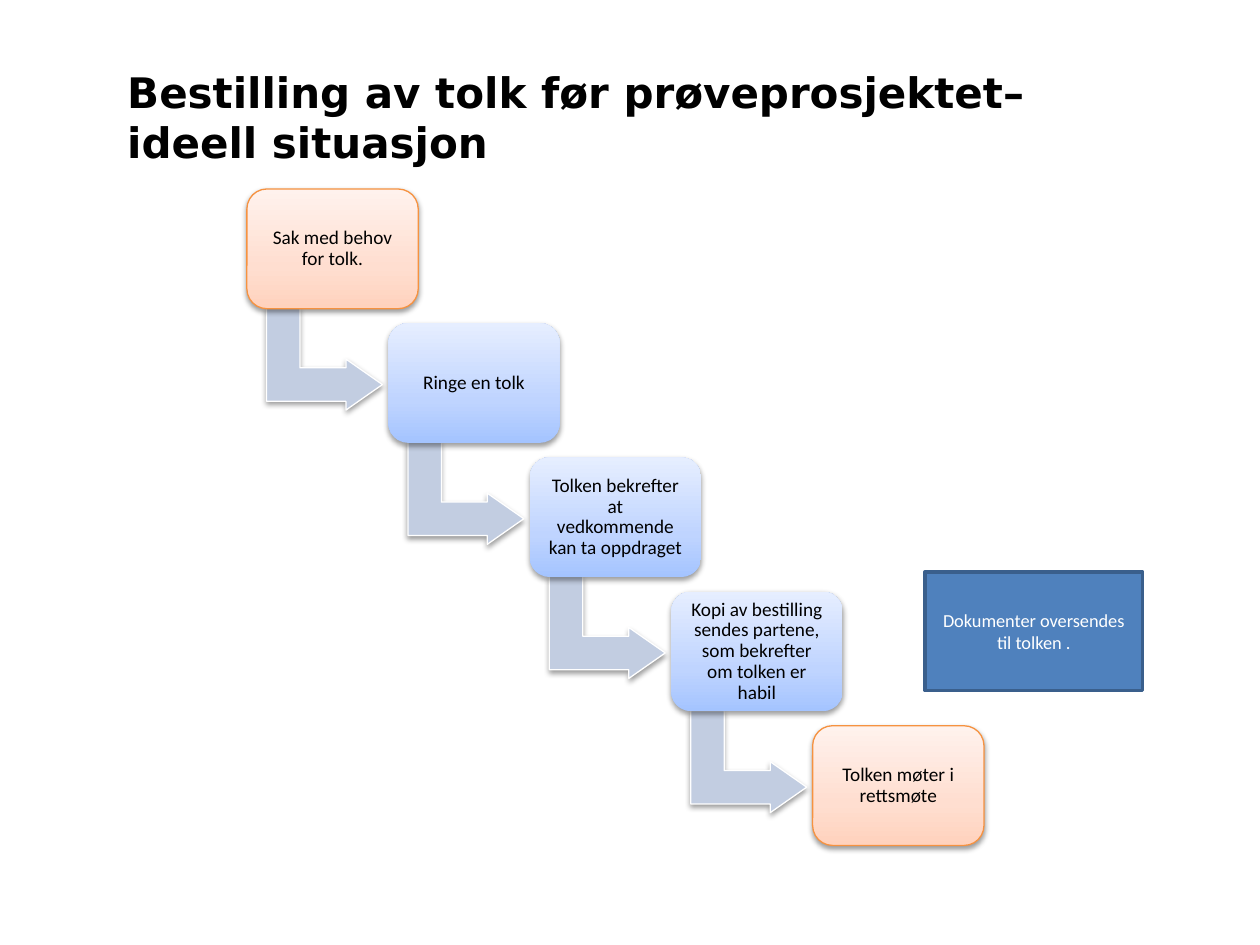
from pptx import Presentation
from pptx.dml.color import RGBColor
from pptx.enum.shapes import MSO_SHAPE as Shape
from pptx.enum.text import MSO_ANCHOR as Anchor, MSO_AUTO_SIZE as Fit, PP_ALIGN as Align
from pptx.oxml import parse_xml
from pptx.oxml.ns import nsdecls, qn
from pptx.util import Inches, Pt

TITLE = "Bestilling av tolk før prøveprosjektet– ideell situasjon"
STEPS = [
    ("Sak med behov for tolk.", "peach"),
    ("Ringe en tolk", "sky"),
    ("Tolken bekrefter at vedkommende kan ta oppdraget", "sky"),
    ("Kopi av bestilling sendes partene, som bekrefter om tolken er habil", "sky"),
    ("Tolken møter i rettsmøte", "peach"),
]
NOTE = "Dokumenter oversendes til tolken ."
COLORS = {"black": "000000", "white": "FFFFFF", "arrow": "C2CDE1",
          "orange": "F69240", "blue": "4F81BD", "navy": "3A5F8C"}
FADES = {
    "peach": [(0, "FFD2BD"), (35, "FFDED0"), (100, "FFF2ED")],
    "sky": [(0, "A4C4FF"), (35, "BFD4FF"), (100, "E6EEFF")],
}
EDGES = {"peach": "orange", "sky": None}
LEFT, TOP = 1.96, 1.5
DX, DY = 1.1225, 1.065
BOX_W, BOX_H = 1.36, 0.95
ARROW_X, ARROW_Y, ARROW_W, ARROW_H = 0.21, 0.89, 0.81, 0.92


def rgb(name):
    return RGBColor.from_string(COLORS[name])


def write(shape, text, size, color, font="Calibri", align=Align.CENTER, pad=0.1, bold=False):
    frame = shape.text_frame
    frame.word_wrap = True
    frame.auto_size = Fit.NONE
    frame.vertical_anchor = Anchor.MIDDLE
    frame.margin_left = frame.margin_right = Inches(pad)
    para = frame.paragraphs[0]
    para.alignment = align
    run = para.add_run()
    run.text = text
    run.font.name = font
    run.font.size = Pt(size)
    run.font.bold = bold
    run.font.color.rgb = rgb(color)
    return para


def add(slide, kind, x, y, w, h, fill=None, line=None, width=0.75):
    shape = slide.shapes.add_shape(kind, Inches(x), Inches(y), Inches(w), Inches(h))
    shape.shadow.inherit = False
    if fill:
        shape.fill.solid()
        shape.fill.fore_color.rgb = rgb(fill)
    if line:
        shape.line.color.rgb = rgb(line)
        shape.line.width = Pt(width)
    else:
        shape.line.fill.background()
    return shape


def shade(shape):
    effects = shape.element.spPr.find(qn("a:effectLst"))
    effects.append(parse_xml(
        f'<a:outerShdw {nsdecls("a")} blurRad="40000" dist="20000" dir="5400000" rotWithShape="0">'
        '<a:srgbClr val="000000"><a:alpha val="38000"/></a:srgbClr></a:outerShdw>'))


def fade(shape, stops):
    marks = "".join(f'<a:gs pos="{pos * 1000}"><a:srgbClr val="{tone}"/></a:gs>'
                    for pos, tone in stops)
    shape.element.spPr.find(qn("a:prstGeom")).addnext(parse_xml(
        f'<a:gradFill {nsdecls("a")} rotWithShape="1"><a:gsLst>{marks}</a:gsLst>'
        '<a:lin ang="16200000" scaled="0"/></a:gradFill>'))


def add_arrow(slide, x, y):
    arrow = add(slide, Shape.BENT_UP_ARROW, x + ARROW_X, y + ARROW_Y,
                ARROW_W, ARROW_H, "arrow", "white")
    arrow.rotation = 90
    for i, value in enumerate((0.328, 0.25, 0.358)):
        arrow.adjustments[i] = value
    shade(arrow)


def add_step(slide, x, y, text, style):
    box = add(slide, Shape.ROUNDED_RECTANGLE, x, y, BOX_W, BOX_H, line=EDGES[style])
    box.adjustments[0] = 0.167
    fade(box, FADES[style])
    shade(box)
    write(box, text, 11, "black", pad=0.09).line_spacing = 0.9


def main():
    """Build the staircase of steps for booking an interpreter."""
    deck = Presentation()
    deck.slide_width, deck.slide_height = Inches(10), Inches(7.5)
    slide = deck.slides.add_slide(deck.slide_layouts[5])

    title = slide.shapes.title
    title.left, title.top = Inches(0.91), Inches(0.3)
    title.width, title.height = Inches(8.18), Inches(1.25)
    write(title, TITLE, 24, "black", "DejaVu Sans", Align.LEFT, bold=True)

    for i, (text, style) in enumerate(STEPS):
        x, y = LEFT + i * DX, TOP + i * DY
        if i < len(STEPS) - 1:
            add_arrow(slide, x, y)
        add_step(slide, x, y, text, style)

    note = add(slide, Shape.RECTANGLE, 7.34, 4.54, 1.73, 0.94, "blue", "navy", 2)
    write(note, NOTE, 10.5, "white")
    deck.save("out.pptx")


if __name__ == "__main__":
    main()
